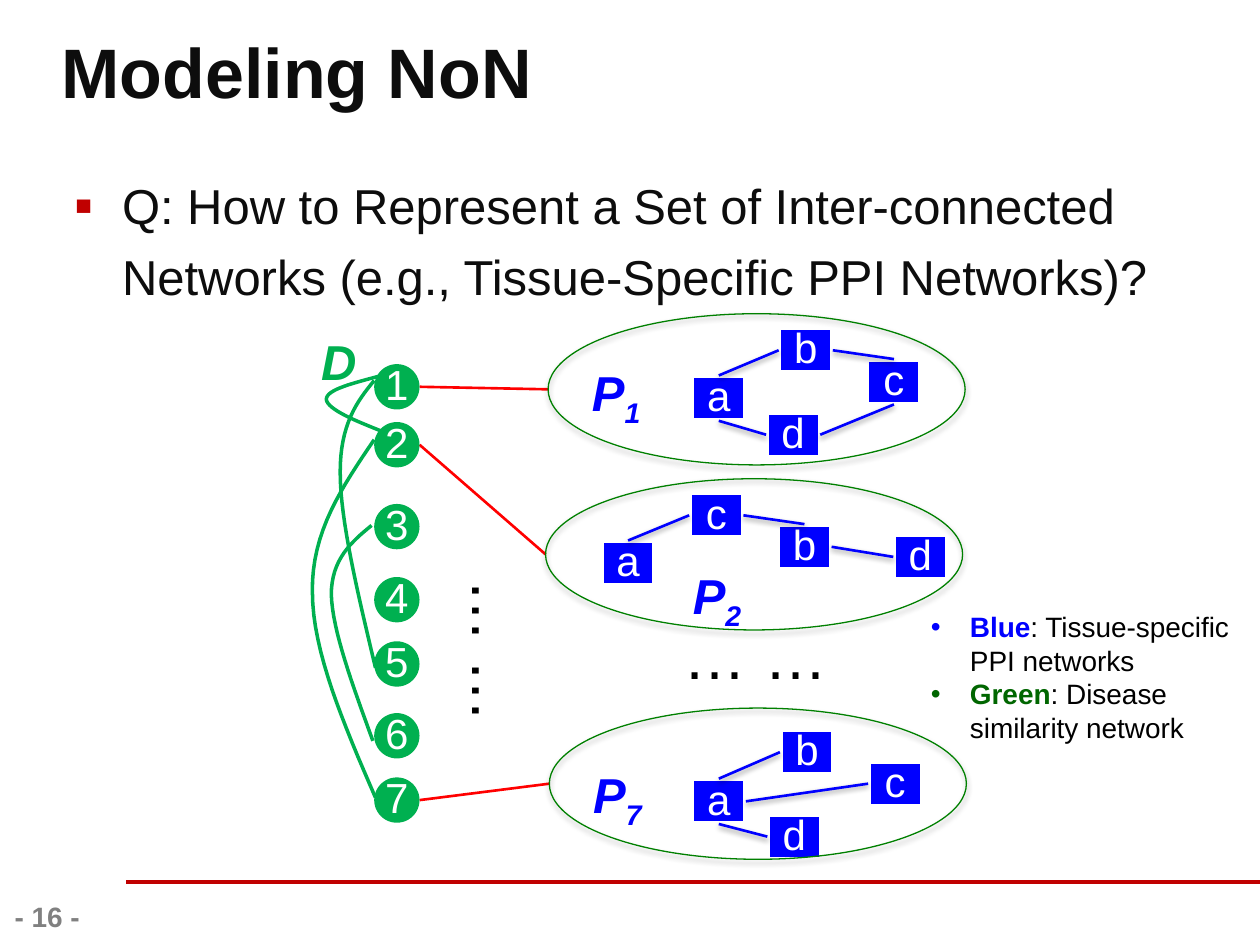
from lxml import etree
from pptx import Presentation
from pptx.dml.color import RGBColor
from pptx.enum.shapes import MSO_CONNECTOR, MSO_SHAPE
from pptx.enum.text import MSO_ANCHOR, PP_ALIGN
from pptx.oxml.ns import qn
from pptx.util import Inches, Pt

STRAIGHT = MSO_CONNECTOR.STRAIGHT
OVAL, RECTANGLE = MSO_SHAPE.OVAL, MSO_SHAPE.RECTANGLE
MIDDLE, TOP_ANCHOR = MSO_ANCHOR.MIDDLE, MSO_ANCHOR.TOP
LEFT_ALIGN, CENTER = PP_ALIGN.LEFT, PP_ALIGN.CENTER
TOP, LEFT, BOTTOM, RIGHT = range(4)

INK, BLACK, WHITE, GRAY = "0D0D0D", "000000", "FFFFFF", "808080"
RED, BRIGHT_RED = "C00000", "FF0000"
BLUE, GREEN, DARK_GREEN, LEGEND_GREEN = "0000FF", "00B050", "008000", "006600"

NODE_TEXT = {"size": Pt(24), "color": WHITE}
LABEL_TEXT = {"size": Pt(28), "bold": True, "italic": True}
LEGEND_TEXT = {"size": Pt(16), "color": BLACK}

# Disease nodes: number and top edge, in one column
DISEASE_SIZE = 0.36
DISEASE_TOPS = {1: 2.89, 2: 3.35, 3: 4, 4: 4.58, 5: 5.09, 6: 5.66, 7: 6.17}

# Disease links: Bezier control points, three more for each further segment
DISEASE_CURVES = [
    [(2.97, 3.02), (2.83, 3.19), (2.7, 3.37), (2.7, 3.75),
     (2.7, 4.13), (2.84, 4.71), (2.98, 5.3)],
    [(2.95, 4.17), (2.79, 4.3), (2.63, 4.44), (2.63, 4.72),
     (2.64, 5.01), (2.8, 5.44), (2.96, 5.88)],
    [(2.97, 3.49), (2.72, 3.86), (2.47, 4.22), (2.48, 4.7),
     (2.48, 5.17), (2.73, 5.75), (2.98, 6.33)],
    [(3.03, 2.98), (2.81, 3.04), (2.59, 3.09), (2.59, 3.17),
     (2.6, 3.25), (2.82, 3.34), (3.05, 3.43)],
]

# Tissue networks: box, then label and node offsets inside it, then edges
NETWORKS = {
    1: ((4.35, 2.49, 3.31, 1.2), (0.25, 0.34),
        {"a": (1.14, 0.49), "b": (1.83, 0.11), "d": (1.73, 0.78), "c": (2.53, 0.36)},
        [("a", TOP, "b", LEFT), ("b", RIGHT, "c", TOP),
         ("a", BOTTOM, "d", LEFT), ("d", RIGHT, "c", BOTTOM)]),
    2: ((4.33, 3.8, 3.31, 1.2), (1.07, 0.64),
        {"a": (0.44, 0.49), "c": (1.14, 0.11), "d": (2.76, 0.44), "b": (1.84, 0.36)},
        [("a", TOP, "c", LEFT), ("c", RIGHT, "b", TOP), ("d", LEFT, "b", RIGHT)]),
    7: ((4.36, 5.62, 3.31, 1.2), (0.25, 0.4),
        {"a": (1.13, 0.56), "b": (1.83, 0.17), "d": (1.73, 0.84), "c": (2.53, 0.42)},
        [("a", TOP, "b", LEFT), ("c", LEFT, "a", RIGHT), ("a", BOTTOM, "d", LEFT)]),
}


def rgb(color):
    return RGBColor.from_string(color)


def add_shadow(effects, alpha, blur, distance, degrees):
    shadow = etree.SubElement(
        effects, qn("a:outerShdw"), blurRad=str(Pt(blur)), dist=str(Pt(distance)),
        dir=str(degrees * 60000), algn="tl", rotWithShape="0")
    color = etree.SubElement(shadow, qn("a:srgbClr"), val=BLACK)
    etree.SubElement(color, qn("a:alpha"), val=str(alpha * 1000))


def add_run(paragraph, text, color=INK, baseline=None, **font_values):
    run = paragraph.add_run()
    run.text = text
    for name, value in {"name": "Arial", **font_values}.items():
        setattr(run.font, name, value)
    run.font.color.rgb = rgb(color)
    if baseline:
        run.font._element.set("baseline", str(baseline * 1000))
    return run


def add_bullet(paragraph, character, indent, color=None, percent=100):
    properties = paragraph._p.get_or_add_pPr()
    properties.set("marL", str(Inches(indent)))
    properties.set("indent", str(Inches(-indent)))
    if color:
        bullet_color = etree.SubElement(properties, qn("a:buClr"))
        etree.SubElement(bullet_color, qn("a:srgbClr"), val=color)
    etree.SubElement(properties, qn("a:buSzPct"), val=str(percent * 1000))
    etree.SubElement(properties, qn("a:buFont"), typeface="Arial")
    etree.SubElement(properties, qn("a:buChar"), char=character)


def add_text_box(slide, box, wrap=True):
    shape = slide.shapes.add_textbox(*map(Inches, box))
    shape.text_frame.word_wrap = wrap
    return shape


def add_line(slide, start, end, color, width):
    line = slide.shapes.add_connector(STRAIGHT, *map(Inches, (*start, *end)))
    line.line.color.rgb = rgb(color)
    line.line.width = Pt(width)
    effects = etree.SubElement(line._element.spPr, qn("a:effectLst"))
    return line, effects


def add_node(slide, kind, box, text, fill):
    node = slide.shapes.add_shape(kind, *map(Inches, box))
    node.shadow.inherit = False
    node.fill.solid()
    node.fill.fore_color.rgb = rgb(fill)
    frame = node.text_frame
    margins = {"margin_left": 0, "margin_top": 0, "margin_right": 0,
               "margin_bottom": Inches(0.05)}
    for name, value in {**margins, "vertical_anchor": MIDDLE}.items():
        setattr(frame, name, value)
    frame.paragraphs[0].alignment = CENTER
    add_run(frame.paragraphs[0], text, **NODE_TEXT)
    return node


def add_title(slide, box, text):
    title = slide.shapes.title
    for name, value in zip(("left", "top", "width", "height"), box):
        setattr(title, name, Inches(value))
    frame = title.text_frame
    for side in ("left", "top", "right", "bottom"):
        setattr(frame, f"margin_{side}", 0)
    frame.vertical_anchor = MIDDLE
    frame.paragraphs[0].alignment = LEFT_ALIGN
    run = add_run(frame.paragraphs[0], text, size=Pt(40), bold=True)
    effects = etree.Element(qn("a:effectLst"))
    run.font._element.find(qn("a:solidFill")).addnext(effects)
    add_shadow(effects, 43, 3, 3, 45)


def add_question(slide, box, text):
    frame = add_text_box(slide, box).text_frame
    frame.vertical_anchor = TOP_ANCHOR
    paragraph = frame.paragraphs[0]
    add_bullet(paragraph, "▪", 0.38, RED, 110)
    paragraph.line_spacing = 1.2
    add_run(paragraph, text, size=Pt(28))


def add_footer(slide, box, text):
    add_line(slide, (1, 7), (10, 7), RED, 2)
    paragraph = add_text_box(slide, box).text_frame.paragraphs[0]
    paragraph.alignment = CENTER
    add_run(paragraph, text, GRAY, size=Pt(16), bold=True)


def add_curve(slide, points, steps=16):
    sampled = []
    for first in range(0, len(points) - 1, 3):
        controls = points[first:first + 4]
        for step in range(1, steps + 1):
            t = step / steps
            weights = ((1 - t) ** 3, 3 * t * (1 - t) ** 2, 3 * t * t * (1 - t), t ** 3)
            sampled.append(tuple(
                Inches(sum(w * point[axis] for w, point in zip(weights, controls)))
                for axis in (0, 1)))
    builder = slide.shapes.build_freeform(*map(Inches, points[0]))
    builder.add_line_segments(sampled, close=False)
    curve = builder.convert_to_shape()
    curve.shadow.inherit = False
    curve.fill.background()
    curve.line.color.rgb = rgb(GREEN)
    curve.line.width = Pt(2)


def add_disease_network(slide, left):
    for number, top in DISEASE_TOPS.items():
        box = (left, top, DISEASE_SIZE, DISEASE_SIZE)
        add_node(slide, OVAL, box, str(number), GREEN).line.fill.background()
    for points in DISEASE_CURVES:
        add_curve(slide, points)
    label = add_text_box(slide, (2.45, 2.58, 0.49, 0.57), wrap=False)
    add_run(label.text_frame.paragraphs[0], "D", GREEN, **LABEL_TEXT)


def add_tissue_network(slide, number, box, label_offset, node_offsets, edges):
    left, top, width, height = box
    # Label with subscript
    label_box = (left + label_offset[0], top + label_offset[1], 0.63, 0.57)
    paragraph = add_text_box(slide, label_box, wrap=False).text_frame.paragraphs[0]
    add_run(paragraph, "P", BLUE, **LABEL_TEXT)
    add_run(paragraph, str(number), BLUE, baseline=-25, **LABEL_TEXT)
    # Nodes
    nodes = {}
    for name, (x, y) in node_offsets.items():
        node = add_node(slide, RECTANGLE, (left + x, top + y, 0.43, 0.36), name, BLUE)
        node.line.color.rgb = rgb(WHITE)
        node.line.width = Pt(3)
        nodes[name] = node
    # Edges
    for begin, begin_side, end, end_side in edges:
        edge, effects = add_line(slide, (left, top), (left, top), BLUE, 1.5)
        edge.begin_connect(nodes[begin], begin_side)
        edge.end_connect(nodes[end], end_side)
        add_shadow(effects, 38, 3.1, 1.6, 90)
    # Outline
    outline = slide.shapes.add_shape(OVAL, *map(Inches, box))
    outline.shadow.inherit = False
    outline.fill.background()
    outline.line.color.rgb = rgb(DARK_GREEN)
    outline.line.width = Pt(0.75)
    add_shadow(outline._element.spPr.find(qn("a:effectLst")), 35, 3.1, 1.8, 90)


def add_ellipsis(slide, box, rotation):
    shape = add_text_box(slide, box, wrap=False)
    shape.rotation = rotation
    add_run(shape.text_frame.paragraphs[0], "… …", BLACK, size=Pt(36))


def add_legend(slide, box, entries):
    frame = add_text_box(slide, box).text_frame
    for index, (name, color, meaning) in enumerate(entries):
        paragraph = frame.add_paragraph() if index else frame.paragraphs[0]
        add_bullet(paragraph, "•", 0.31)
        add_run(paragraph, name, **{**LEGEND_TEXT, "color": color, "bold": True})
        add_run(paragraph, f": {meaning}", **LEGEND_TEXT)


def main():
    presentation = Presentation()
    presentation.slide_width, presentation.slide_height = Inches(10), Inches(7.5)
    slide = presentation.slides.add_slide(presentation.slide_layouts[5])
    add_title(slide, (0.49, 0.12, 9, 0.88), "Modeling NoN")
    add_question(slide, (0.49, 1.25, 9.51, 5.59),
                 "Q: How to Represent a Set of Inter-connected Networks "
                 "(e.g., Tissue-Specific PPI Networks)?")
    add_footer(slide, (0, 7.09, 0.75, 0.41), "- 16 -")
    # Links from each disease to its tissue network
    disease_left = 2.97
    for number, ((left, top, _, height), *_) in NETWORKS.items():
        start = (disease_left + DISEASE_SIZE, DISEASE_TOPS[number] + DISEASE_SIZE / 2)
        add_line(slide, start, (left, top + height / 2), BRIGHT_RED, 1.5)
    add_disease_network(slide, disease_left)
    for number, parts in NETWORKS.items():
        add_tissue_network(slide, number, *parts)
    add_ellipsis(slide, (5.33, 4.84, 1.35, 0.71), 0)
    add_ellipsis(slide, (3.27, 4.82, 1.35, 0.71), 90)
    add_legend(slide, (7.29, 4.79, 2.6, 1.18), [
        ("Blue", BLUE, "Tissue-specific PPI networks"),
        ("Green", LEGEND_GREEN, "Disease similarity network")])
    presentation.save("out.pptx")


if __name__ == "__main__":
    main()
